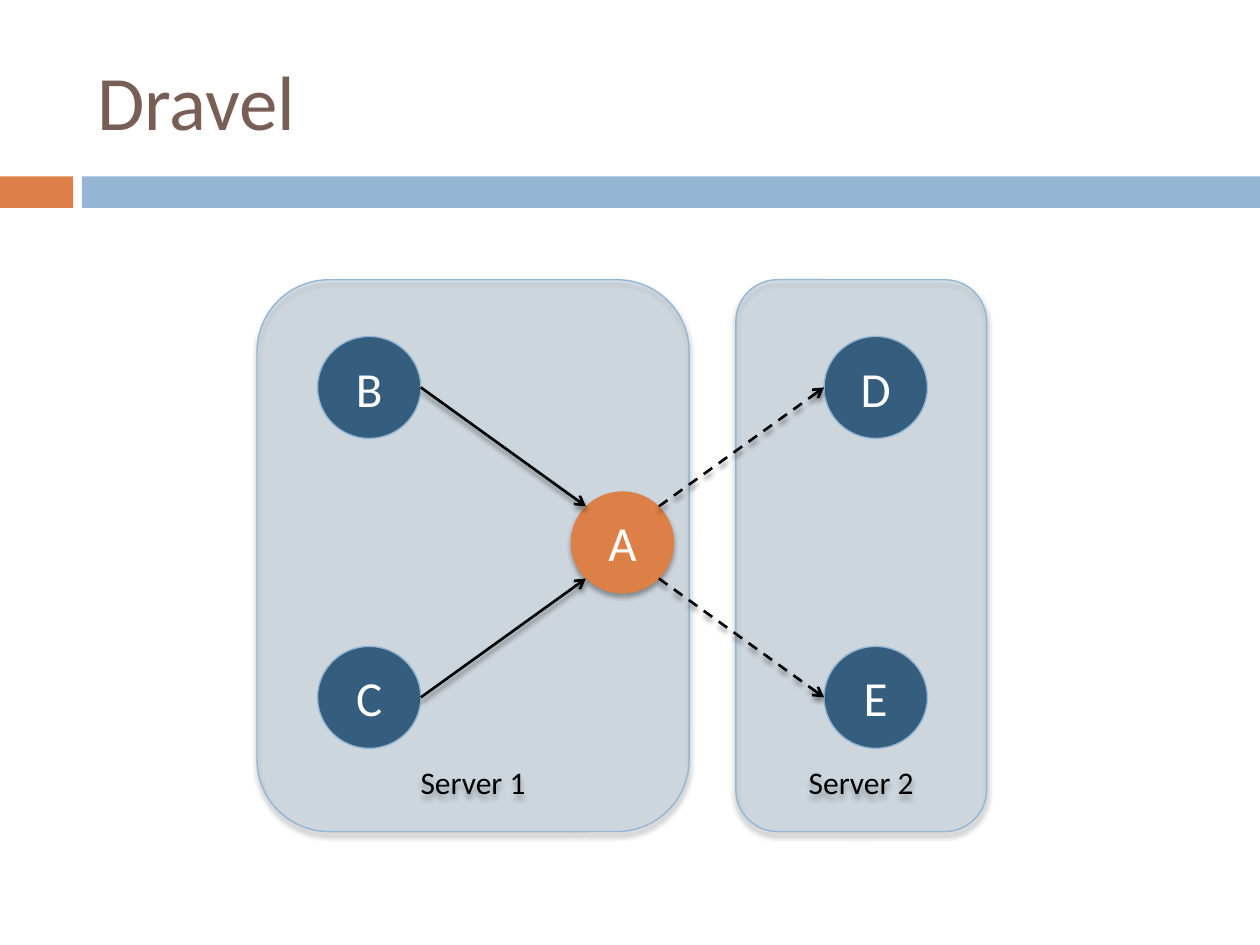
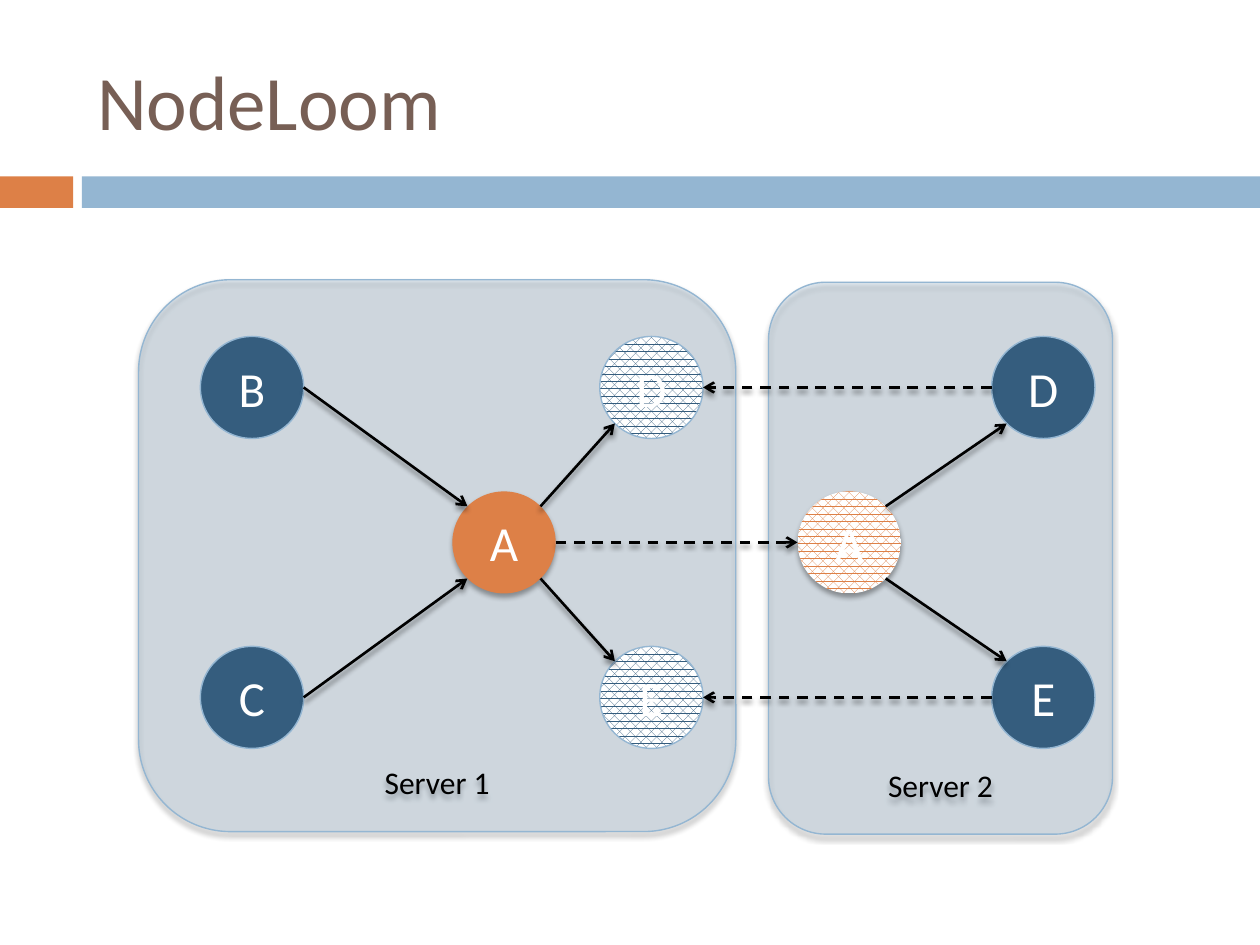
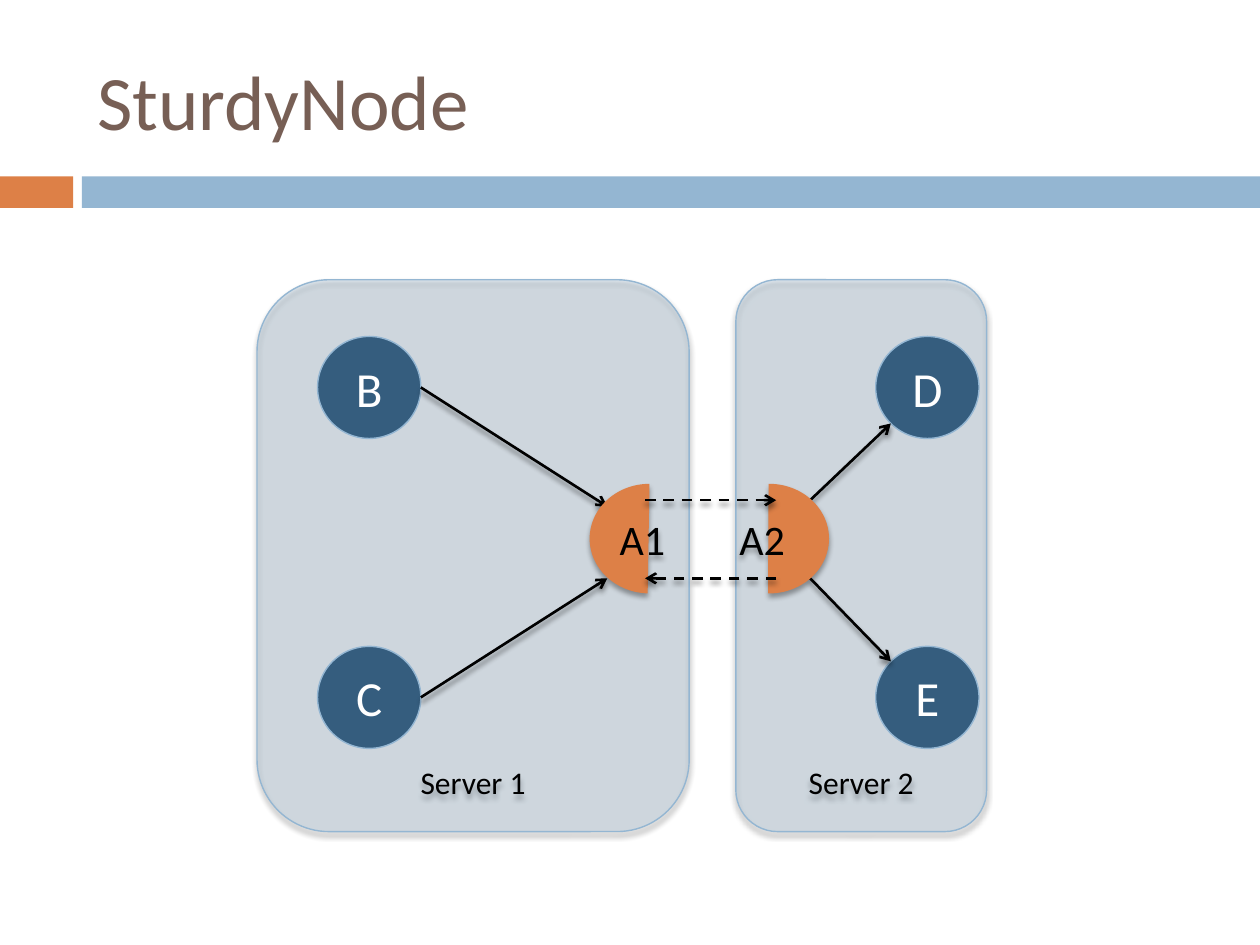
from lxml.etree import SubElement
from pptx import Presentation
from pptx.dml.color import RGBColor
from pptx.enum.dml import MSO_LINE, MSO_PATTERN
from pptx.enum.shapes import MSO_CONNECTOR, MSO_SHAPE as Kind
from pptx.enum.text import MSO_ANCHOR as Anchor, PP_ALIGN as Align
from pptx.oxml.ns import qn
from pptx.util import Inches, Pt

BLUE = RGBColor(0x94, 0xB6, 0xD2)
NAVY = RGBColor(0x35, 0x5D, 0x7E)
ORANGE = RGBColor(0xDD, 0x80, 0x47)
BROWN = RGBColor(0x77, 0x5F, 0x55)
BLACK = RGBColor(0, 0, 0)
WHITE = RGBColor(0xFF, 0xFF, 0xFF)
FONT = "Calibri"

TOP, MID, LOW = 2.67, 3.9, 5.13
NODE = (0.82, 0.81)
HALF = (0.95, 0.87)
DIAG = 0.5 ** 0.5
SIDES = {
    "left": (-1, 0), "right": (1, 0),
    "nw": (-DIAG, -DIAG), "ne": (DIAG, -DIAG),
    "sw": (-DIAG, DIAG), "se": (DIAG, DIAG),
}
BANDS = [(0, 0.58, ORANGE), (0.65, 9.35, BLUE)]
PAIR = [("Server 2", 5.84, 2.22, 1.99), ("Server 1", 2.04, 2.22, 3.43)]

SLIDES = [
    {
        "title": "Dravel",
        "servers": PAIR,
        "nodes": {
            "B": ("B", 2.52, TOP, NAVY, False),
            "C": ("C", 2.52, LOW, NAVY, False),
            "A": ("A", 4.53, MID, ORANGE, False),
            "D": ("D", 6.54, TOP, NAVY, False),
            "E": ("E", 6.54, LOW, NAVY, False),
        },
        "links": [
            (("B", "right"), ("A", "nw"), False),
            (("C", "right"), ("A", "sw"), False),
            (("A", "ne"), ("D", "left"), True),
            (("A", "se"), ("E", "left"), True),
        ],
    },
    {
        "title": "NodeLoom",
        "servers": [("Server 2", 6.1, 2.24, 2.73), ("Server 1", 1.1, 2.22, 4.74)],
        "nodes": {
            "B": ("B", 1.59, TOP, NAVY, False),
            "C": ("C", 1.59, LOW, NAVY, False),
            "A": ("A", 3.59, MID, ORANGE, False),
            "D": ("D", 7.87, TOP, NAVY, False),
            "E": ("E", 7.87, LOW, NAVY, False),
            "D ghost": ("D", 4.76, TOP, NAVY, True),
            "E ghost": ("E", 4.76, LOW, NAVY, True),
            "A ghost": ("A", 6.33, MID, ORANGE, True),
        },
        "links": [
            (("B", "right"), ("A", "nw"), False),
            (("C", "right"), ("A", "sw"), False),
            (("A", "ne"), ("D ghost", "sw"), False),
            (("A", "se"), ("E ghost", "nw"), False),
            (("A", "right"), ("A ghost", "left"), True),
            (("A ghost", "ne"), ("D", "sw"), False),
            (("A ghost", "se"), ("E", "nw"), False),
            (("D", "left"), ("D ghost", "right"), True),
            (("E", "left"), ("E ghost", "right"), True),
        ],
    },
    {
        "title": "SturdyNode",
        "servers": PAIR,
        "nodes": {
            "B": ("B", 2.52, TOP, NAVY, False),
            "C": ("C", 2.52, LOW, NAVY, False),
            "D": ("D", 6.95, TOP, NAVY, False),
            "E": ("E", 6.95, LOW, NAVY, False),
        },
        "links": [
            (("B", "right"), (4.82, 4.02), False),
            (("C", "right"), (4.82, 4.59), False),
            ((6.43, 4.59), ("E", "nw"), False),
            ((6.43, 3.97), ("D", "sw"), False),
        ],
        "halves": [
            ("A1", 4.68, (55.15, 162)),
            ("A2", 5.63, (161.64, 54.69)),
        ],
        "swaps": [
            ((5.12, 3.97), (6.16, 3.97), True),
            ((6.16, 4.59), (5.12, 4.59), True),
        ],
    },
]


def write(shape, text, size=28, color=WHITE, align=Align.CENTER, anchor=Anchor.MIDDLE):
    frame = shape.text_frame
    frame.word_wrap = True
    frame.vertical_anchor = anchor
    para = frame.paragraphs[0]
    para.alignment = align
    run = para.add_run()
    run.text = text
    run.font.name = FONT
    run.font.size = Pt(size)
    run.font.color.rgb = color


def shade(item, alpha=45, dist=2.4):
    props = item._element.spPr
    box = props.find(qn("a:effectLst"))
    if box is None:
        box = SubElement(props, qn("a:effectLst"))
    cast = SubElement(box, qn("a:outerShdw"), blurRad=str(Pt(3)), dist=str(Pt(dist)),
                      dir="5400000", rotWithShape="0")
    tint = SubElement(cast, qn("a:srgbClr"), val=str(BLACK))
    SubElement(tint, qn("a:alpha"), val=str(alpha * 1000))


def draw(slide, kind, box, fill, line=None, ghost=False):
    shape = slide.shapes.add_shape(kind, *map(Inches, box))
    shape.shadow.inherit = False
    if ghost:
        shape.fill.patterned()
        shape.fill.pattern = MSO_PATTERN.PERCENT_60
        shape.fill.fore_color.rgb = fill
        shape.fill.back_color.rgb = WHITE
    else:
        shape.fill.solid()
        shape.fill.fore_color.rgb = fill
    if line is None:
        shape.line.fill.background()
    else:
        shape.line.color.rgb = line
        shape.line.width = Pt(0.79)
    return shape


def add_server(slide, name, x, y, wide, high=4.38):
    shape = draw(slide, Kind.ROUNDED_RECTANGLE, (x, y, wide, high), BLUE, BLUE)
    tint = shape._element.spPr.find(qn("a:solidFill")).find(qn("a:srgbClr"))
    SubElement(tint, qn("a:alpha"), val="25000")
    shade(shape)
    write(shape, name, size=18, color=BLACK, anchor=Anchor.BOTTOM)
    inset = 0.29 * min(wide, high) / 6
    shape.text_frame.margin_bottom = Inches(max(0, 0.24 - inset))


def add_node(slide, name, x, y, fill, ghost):
    line = BLUE if fill == NAVY else None
    shape = draw(slide, Kind.OVAL, (x, y, *NODE), fill, line, ghost)
    if line is None:
        shade(shape, 35, 2)
    write(shape, name)


def add_half(slide, name, x, arc):
    shape = draw(slide, Kind.CHORD, (x, 3.84, *HALF), ORANGE)
    for i, angle in enumerate(arc):
        shape.adjustments[i] = angle
    shade(shape, 35, 2)
    write(shape, name, size=24, color=BLACK, align=Align.LEFT)


def locate(end, nodes):
    if end[0] not in nodes:
        return end
    _, x, y, *_ = nodes[end[0]]
    return [pos + size / 2 * (1 + way)
            for pos, size, way in zip((x, y), NODE, SIDES[end[1]])]


def add_link(slide, nodes, start, end, dashed):
    spots = [*locate(start, nodes), *locate(end, nodes)]
    link = slide.shapes.add_connector(MSO_CONNECTOR.STRAIGHT, *map(Inches, spots))
    link.line.color.rgb = BLACK
    link.line.width = Pt(1.5)
    if dashed:
        link.line.dash_style = MSO_LINE.DASH
    SubElement(link.line._get_or_add_ln(), qn("a:tailEnd"), type="arrow")
    shade(link)


def add_slide(deck, data):
    slide = deck.slides.add_slide(deck.slide_layouts[5])
    title = slide.shapes.title
    title.left, title.top, title.width, title.height = map(Inches, (0.67, 0.25, 8.92, 1.08))
    write(title, data["title"], size=44, color=BROWN, align=Align.LEFT)
    for x, wide, fill in BANDS:
        draw(slide, Kind.RECTANGLE, (x, 1.4, wide, 0.25), fill)
    for server in data["servers"]:
        add_server(slide, *server)
    nodes = data["nodes"]
    for node in nodes.values():
        add_node(slide, *node)
    for link in data["links"]:
        add_link(slide, nodes, *link)
    for half in data.get("halves", []):
        add_half(slide, *half)
    for swap in data.get("swaps", []):
        add_link(slide, nodes, *swap)


def main():
    deck = Presentation()
    deck.slide_width, deck.slide_height = Inches(10), Inches(7.5)
    for data in SLIDES:
        add_slide(deck, data)
    deck.save("out.pptx")


if __name__ == "__main__":
    main()
